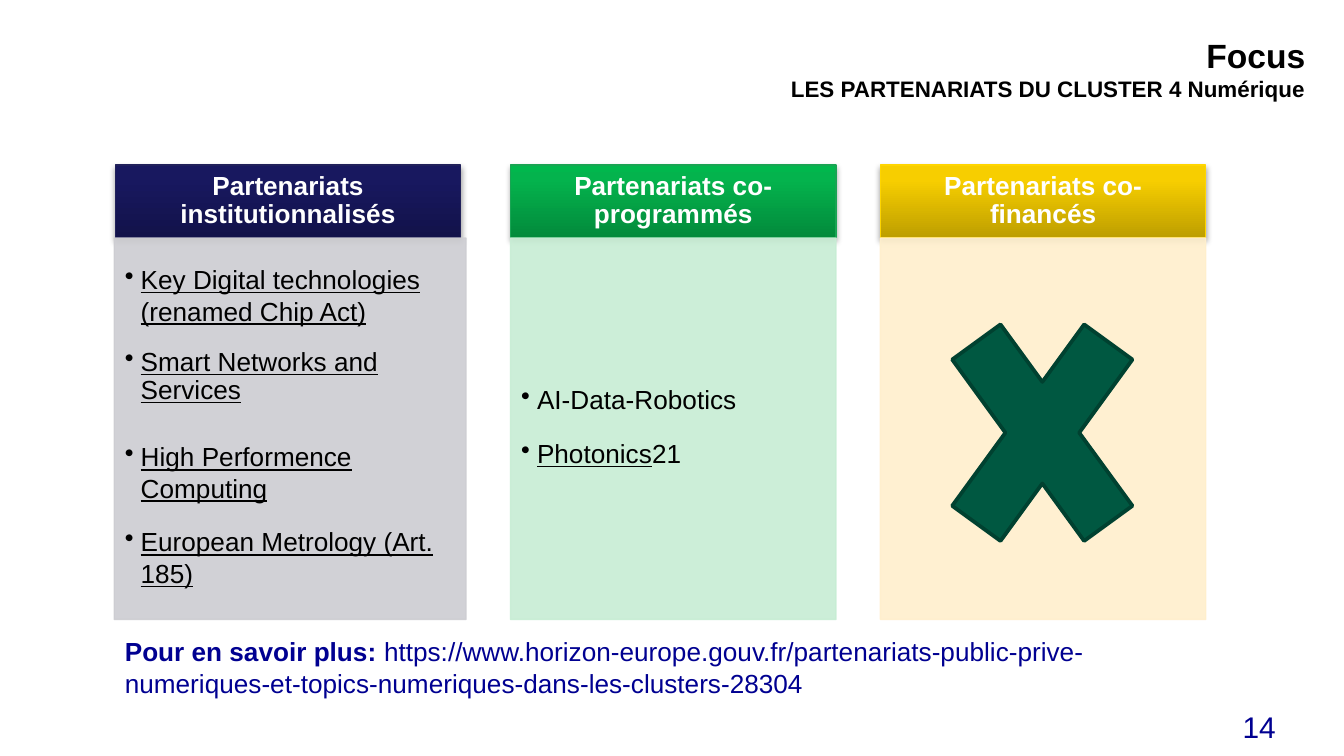
from copy import deepcopy
from dataclasses import dataclass

from lxml.etree import SubElement
from pptx import Presentation
from pptx.dml.color import RGBColor
from pptx.enum.shapes import MSO_SHAPE
from pptx.enum.text import MSO_ANCHOR, PP_ALIGN
from pptx.oxml.ns import qn
from pptx.util import Cm, Pt


@dataclass(frozen=True)
class Theme:
    font: str = "Arial"
    black: str = "000000"
    white: str = "FFFFFF"
    navy: str = "000091"
    cross: str = "005841"
    cross_line: str = "004130"
    institutional: tuple = ("12124A", "18185F", "161661", "21215A", "CDCDD2")
    programmed: tuple = ("038A3B", "04B34D", "01B74D", "19A453", "C7EDD4")
    financed: tuple = ("BE9F00", "F7CE00", "F8CF00", "FFD500", "FFEFCC")
    title: int = 18
    number: int = 16
    body: int = 14
    subtitle: int = 12


theme = Theme()


def style(span, size, color, bold=False, underline=False):
    span.font.name = theme.font
    span.font.size = Pt(size)
    span.font.color.rgb = RGBColor.from_string(color)
    span.font.bold = bold
    span.font.underline = underline


def add_panel(left, top, width, height, line_color, insets):
    panel = page.shapes.add_shape(MSO_SHAPE.RECTANGLE, Cm(left), Cm(top), Cm(width), Cm(height))
    panel.shadow.inherit = False
    panel.line.color.rgb = RGBColor.from_string(line_color)
    panel.line.width = Pt(0.75)
    frame = panel.text_frame
    frame.word_wrap = True
    frame.vertical_anchor = MSO_ANCHOR.MIDDLE
    frame.margin_left, frame.margin_top, frame.margin_right, frame.margin_bottom = map(Cm, insets)
    return panel


deck = Presentation()
deck.slide_width, deck.slide_height = Cm(25.4), Cm(14.29)
page = deck.slides.add_slide(deck.slide_layouts[6])

texts = [
    (21.11, 13.28, 3.25, 0.99, PP_ALIGN.RIGHT, [
        [("14", theme.number, theme.navy, False)],
    ]),
    (8.89, 0.53, 16.03, 1.55, PP_ALIGN.RIGHT, [
        [("Focus", theme.title, theme.black, True)],
        [("LES PARTENARIATS DU CLUSTER 4 Numérique", theme.subtitle, theme.black, True)],
    ]),
    (2.11, 11.89, 20.68, 1.45, PP_ALIGN.LEFT, [
        [("Pour en savoir plus: ", theme.body, theme.navy, True),
         ("https://www.horizon-europe.gouv.fr/partenariats-public-prive-"
          "numeriques-et-topics-numeriques-dans-les-clusters-28304", theme.body, theme.navy, False)],
    ]),
]
for left, top, width, height, alignment, lines in texts:
    box = page.shapes.add_textbox(Cm(left), Cm(top), Cm(width), Cm(height))
    box.text_frame.word_wrap = True
    box.text_frame.text = "\n".join(spans[0][0] for spans in lines)
    for para, spans in zip(box.text_frame.paragraphs, lines):
        para.alignment = alignment
        for wording, *look in spans[1:]:
            para.add_run().text = wording
        for span, (wording, *look) in zip(para.runs, spans):
            style(span, *look)

columns = [
    ("Partenariats institutionnalisés", theme.institutional, 2.18, 6.53, 2.16, 6.65, [
        ("Key Digital technologies (renamed Chip Act)", "", 1, 12),
        ("Smart Networks and Services", "", 0.9, 19),
        ("High Performence Computing", "", 1, 12),
        ("European Metrology (Art. 185)", "", 1, 12),
    ]),
    ("Partenariats co-programmés", theme.programmed, 9.65, 6.15, 9.65, 6.15, [
        ("", "AI-Data-Robotics", 1, 12),
        ("Photonics", "21", 1, 12),
    ]),
    ("Partenariats co-financés", theme.financed, 16.64, 6.15, 16.64, 6.15, []),
]
for heading, colors, head_left, head_width, body_left, body_width, partners in columns:
    *gradient, edge, tint = colors

    header = add_panel(head_left, 3.12, head_width, 1.37, edge, (0.28, 0.15, 0.28, 0.15))
    header.fill.gradient()
    header.fill.gradient_angle = 90
    stop_list = header.fill._xPr.find(qn("a:gradFill")).find(qn("a:gsLst"))
    stop_list.append(deepcopy(stop_list[-1]))
    for stop, color, position in zip(header.fill.gradient_stops, gradient, (0, 0.8, 1)):
        stop.color.rgb = RGBColor.from_string(color)
        stop.position = position
    effects = header._element.spPr.find(qn("a:effectLst"))
    shadow = SubElement(effects, qn("a:outerShdw"), blurRad="40000", dist="23000",
                        dir="5400000", rotWithShape="0")
    shadow_color = SubElement(shadow, qn("a:srgbClr"), val=theme.black)
    SubElement(shadow_color, qn("a:alpha"), val="35000")
    header.text_frame.text = heading
    para = header.text_frame.paragraphs[0]
    para.alignment = PP_ALIGN.CENTER
    para.line_spacing = 0.9
    style(para.runs[0], theme.body, theme.white, bold=True)

    body = add_panel(body_left, 4.5, body_width, 7.21, tint, (0.2, 0.2, 0.28, 0.3))
    body.fill.solid()
    body.fill.fore_color.rgb = RGBColor.from_string(tint)
    for color in body._element.spPr.iter(qn("a:srgbClr")):
        SubElement(color, qn("a:alpha"), val="90000")
    body.text_frame.text = "\n".join(underlined or plain for underlined, plain, *spacing in partners)
    for para, (underlined, plain, line_spacing, space_after) in zip(body.text_frame.paragraphs, partners):
        properties = para._p.get_or_add_pPr()
        properties.set("marL", str(Cm(0.3)))
        properties.set("indent", str(-Cm(0.3)))
        SubElement(properties, qn("a:buChar"), char="•")
        para.alignment = PP_ALIGN.LEFT
        para.line_spacing = line_spacing
        para.space_after = Pt(space_after)
        style(para.runs[0], theme.body, theme.black, underline=bool(underlined))
        if underlined and plain:
            span = para.add_run()
            span.text = plain
            style(span, theme.body, theme.black)

cross = page.shapes.add_shape(MSO_SHAPE.MATH_MULTIPLY, Cm(17.3), Cm(4.88), Cm(4.8), Cm(6.6))
cross.shadow.inherit = False
cross.fill.solid()
cross.fill.fore_color.rgb = RGBColor.from_string(theme.cross)
cross.line.color.rgb = RGBColor.from_string(theme.cross_line)
cross.line.width = Pt(2)

deck.save("out.pptx")
